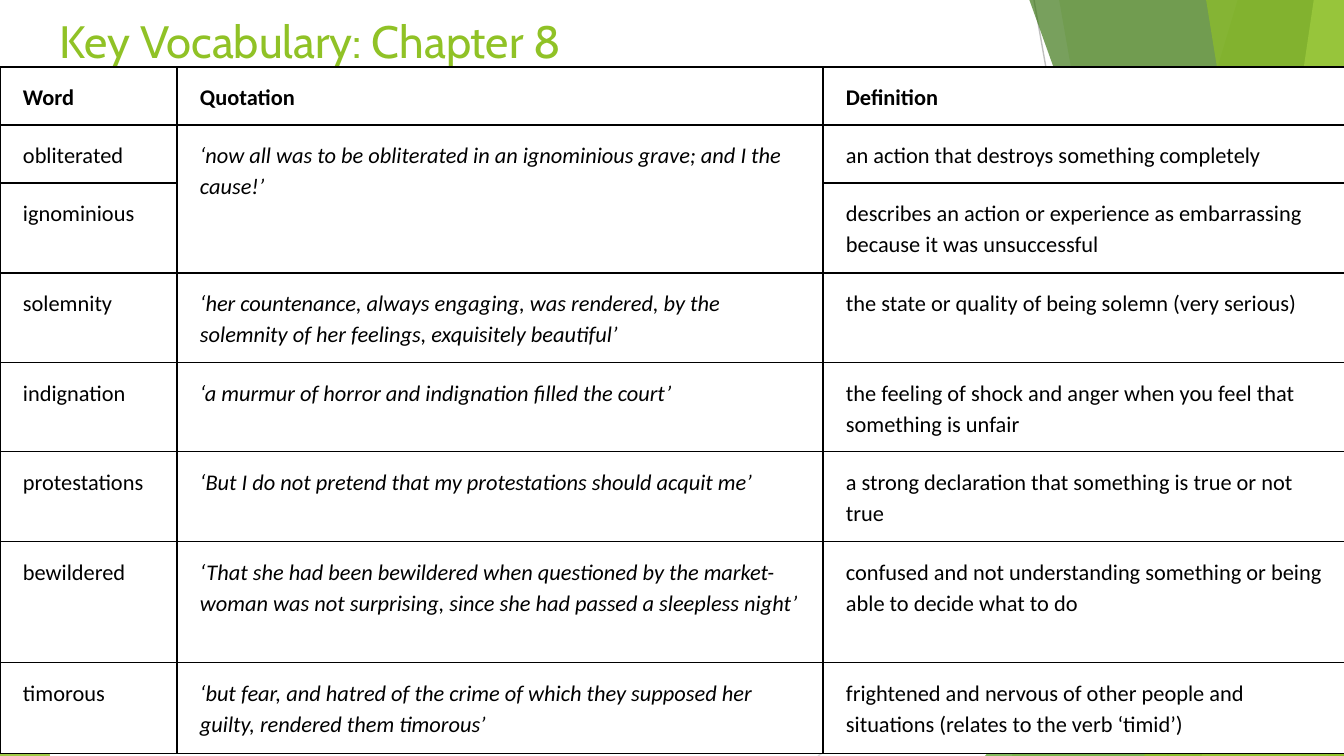
"""Builds the Chapter 8 key vocabulary slide."""
from lxml.etree import SubElement
from pptx import Presentation
from pptx.dml.color import RGBColor as RGB
from pptx.enum.shapes import MSO_CONNECTOR as CONN, MSO_SHAPE as SHAPE
from pptx.enum.text import MSO_ANCHOR as ANCHOR
from pptx.oxml.ns import qn
from pptx.util import Pt

PX = 914400 / 134.4
W, H = 1344, 756
BLACK, WHITE = RGB(0, 0, 0), RGB(255, 255, 255)
LIME, GREEN, DARK = RGB(0x90, 0xC2, 0x26), RGB(0x54, 0xA0, 0x21), RGB(0x3F, 0x78, 0x19)
PALE = RGB(0xC0, 0xE4, 0x74)
GREY, LIGHT_GREY = RGB(0xBF, 0xBF, 0xBF), RGB(0xD9, 0xD9, 0xD9)

COLS = [177, 646, 532]
ROWS = [58, 58, 90, 90, 89, 90, 121, 91]
VOCABULARY = [
    ("Word", "Quotation", "Definition"),
    ("obliterated",
     "‘now all was to be obliterated in an ignominious grave; and I the cause!’",
     "an action that destroys something completely"),
    ("ignominious", "",
     "describes an action or experience as embarrassing because it was unsuccessful"),
    ("solemnity",
     "‘her countenance, always engaging, was rendered, by the solemnity of her feelings, "
     "exquisitely beautiful’",
     "the state or quality of being solemn (very serious)"),
    ("indignation",
     "‘a murmur of horror and indignation filled the court’",
     "the feeling of shock and anger when you feel that something is unfair"),
    ("protestations",
     "‘But I do not pretend that my protestations should acquit me’",
     "a strong declaration that something is true or not true"),
    ("bewildered",
     "‘That she had been bewildered when questioned by the market-woman was not surprising, "
     "since she had passed a sleepless night’",
     "confused and not understanding something or being able to decide what to do"),
    ("timorous",
     "‘but fear, and hatred of the crime of which they supposed her guilty, "
     "rendered them timorous’",
     "frightened and nervous of other people and situations (relates to the verb ‘timid’)"),
]


def emu(*lengths):
    return [round(n * PX) for n in lengths]


class Deck:
    """Holds the style and the current slide."""

    body_font, title_font, inset, indent = "Calibri", "Cabin", 13, 10

    def __init__(self):
        self.prs = Presentation()
        self.prs.slide_width, self.prs.slide_height = emu(W, H)
        self.slide = self.prs.slides.add_slide(self.prs.slide_layouts[6])
        self.shapes = self.slide.shapes

    def line(self, x1, y1, x2, y2, color):
        c = self.shapes.add_connector(CONN.STRAIGHT, *emu(x1, y1, x2, y2))
        c.line.color.rgb, c.line.width = color, Pt(0.75)
        SubElement(c._element.spPr, qn("a:effectLst"))

    def paint(self, sp, color, opacity):
        sp.shadow.inherit = False
        sp.fill.solid()
        sp.fill.fore_color.rgb = color
        sp.line.fill.background()
        clr = sp._element.spPr.find(qn("a:solidFill"))[0]
        SubElement(clr, qn("a:alpha"), val=str(opacity * 1000))

    def wedge(self, top_x, bottom_x, color, opacity):
        fb = self.shapes.build_freeform(top_x, -1, scale=PX)
        fb.add_line_segments([(W, -1), (W, H), (bottom_x, H)], close=True)
        self.paint(fb.convert_to_shape(), color, opacity)

    def triangle(self, x, y, w, h, peak, color, opacity):
        sp = self.shapes.add_shape(SHAPE.ISOSCELES_TRIANGLE, *emu(x, y, w, h))
        sp.adjustments[0] = peak
        self.paint(sp, color, opacity)

    def run(self, p, text, font, size, color, bold=False, italic=False):
        r = p.add_run()
        r.text = text
        f = r.font
        f.name, f.size, f.bold, f.italic = font, Pt(size), bold, italic
        f.color.rgb = color

    def pad(self, box):
        box.margin_left, box.margin_right, box.margin_top, box.margin_bottom = emu(*[self.inset] * 4)

    def title(self, x, y, w, h, text):
        tf = self.shapes.add_textbox(*emu(x, y, w, h)).text_frame
        tf.word_wrap, tf.vertical_anchor = True, ANCHOR.TOP
        self.pad(tf)
        self.run(tf.paragraphs[0], text, self.title_font, 24.3, LIME)

    def cell(self, cell, text, bold, italic):
        self.pad(cell)
        tc_pr = cell._tc.get_or_add_tcPr()
        for side in "LRTB":
            ln = SubElement(tc_pr, qn(f"a:ln{side}"), w=str(Pt(0.75)))
            SubElement(SubElement(ln, qn("a:solidFill")), qn("a:srgbClr"), val=str(BLACK))
        cell.fill.solid()
        cell.fill.fore_color.rgb = WHITE
        if text:
            p = cell.text_frame.paragraphs[0]
            p.line_spacing = 1.15
            for side in ("marL", "marR"):
                p._p.get_or_add_pPr().set(side, str(emu(self.indent)[0]))
            self.run(p, text, self.body_font, 12, BLACK, bold, italic)

    def table(self, x, y, cols, rows, content):
        frame = self.shapes.add_table(len(rows), len(cols), *emu(x, y, sum(cols), sum(rows)))
        table = frame.table
        table.first_row = table.horz_banding = False
        for col, width in zip(table.columns, emu(*cols)):
            col.width = width
        for row, height in zip(table.rows, emu(*rows)):
            row.height = height
        for i, texts in enumerate(content):
            for j, text in enumerate(texts):
                self.cell(table.cell(i, j), text, bold=i == 0, italic=i > 0 and j == 1)
        return table


def main():
    deck = Deck()
    deck.line(1034, 0, 1168, H, GREY)
    deck.line(W, 406, 818, H, LIGHT_GREY)
    deck.wedge(1238, 1012, LIME, 30)
    deck.wedge(1059, 1192, LIME, 20)
    deck.triangle(985, 336, 359, 420, 1, GREEN, 72)
    deck.wedge(1029, 1301, DARK, 70)
    deck.wedge(1314, 1202, PALE, 70)
    deck.wedge(1206, 1328, LIME, 65)
    deck.triangle(1144, 395, 200, 361, 1, LIME, 80)
    deck.triangle(0, 442, 50, 314, 0, LIME, 85)
    deck.title(47, 0, 1253, 85, "Key Vocabulary: Chapter 8")
    table = deck.table(0, 67, COLS, ROWS, VOCABULARY)
    table.cell(1, 1).merge(table.cell(2, 1))
    deck.prs.save("out.pptx")


if __name__ == "__main__":
    main()
